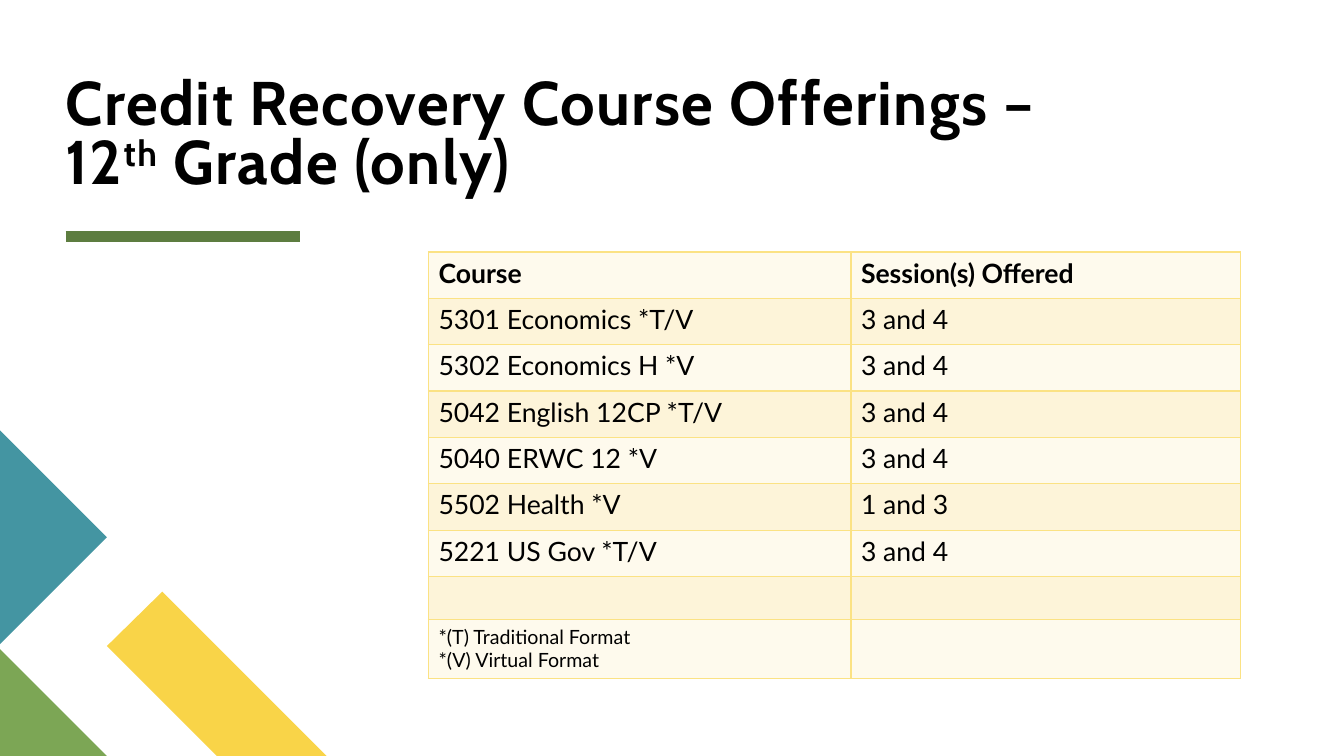
from lxml import etree
from pptx import Presentation, util as u
from pptx.dml.color import RGBColor
from pptx.enum import shapes, text
from pptx.oxml import ns

PX = 9144
BLACK = RGBColor(0x00, 0x00, 0x00)
WHITE = RGBColor(0xFF, 0xFF, 0xFF)
YELLOW = RGBColor(0xF9, 0xD4, 0x48)
GREEN = RGBColor(0x7C, 0xA6, 0x55)
DARK_GREEN = RGBColor(0x5D, 0x7D, 0x40)
TEAL = RGBColor(0x44, 0x95, 0xA2)
BANDS = RGBColor(0xFE, 0xFA, 0xED), RGBColor(0xFD, 0xF4, 0xD9)
BORDER = RGBColor(0xFB, 0xE2, 0x84)

COURSES = [
    ("Course", "Session(s) Offered"),
    ("5301 Economics *T/V", "3 and 4"),
    ("5302 Economics H *V", "3 and 4"),
    ("5042 English 12CP *T/V", "3 and 4"),
    ("5040 ERWC 12 *V", "3 and 4"),
    ("5502 Health *V", "1 and 3"),
    ("5221 US Gov *T/V", "3 and 4"),
    ("", ""),
    ("*(T) Traditional Format\n*(V) Virtual Format", ""),
]
COLUMN_WIDTHS = [419, 386]
ROW_HEIGHTS = [46] * 7 + [43, 58]
DECORATIONS = [
    (YELLOW, [(324, 750), (215, 750), (106, 641), (161, 587)]),
    (GREEN, [(106, 750), (0, 750), (0, 644)]),
    (TEAL, [(0, 427), (106, 533), (0, 639)]),
]


def px(*lengths):
    """Turn pixel lengths into EMU."""
    return [u.Emu(length * PX) for length in lengths]


def style_font(span, name, size, bold):
    """Give a run its font, size, weight and the text colour."""
    span.font.name = name
    span.font.size = u.Pt(size)
    span.font.bold = bold
    span.font.color.rgb = BLACK


def add_decoration(page, color, points):
    """Draw a filled polygon through the given points."""
    builder = page.shapes.build_freeform(*points[0], scale=PX)
    builder.add_line_segments(points[1:], close=True)
    shape = builder.convert_to_shape()
    shape.shadow.inherit = False
    shape.fill.solid()
    shape.fill.fore_color.rgb = color
    shape.line.fill.background()


def add_rule(page, left, right, top):
    """Draw the thick line below the title."""
    rule = page.shapes.add_connector(
        shapes.MSO_CONNECTOR.STRAIGHT, *px(left, top, right, top))
    rule.line.color.rgb = DARK_GREEN
    rule.line.width = u.Pt(8)
    etree.SubElement(rule._element.spPr, ns.qn("a:effectLst"))


def add_title(page):
    """Write the two-line title with its raised ordinal ending."""
    box = page.shapes.add_textbox(*px(65, 11, 1189, 184))
    frame = box.text_frame
    frame.word_wrap = True
    frame.vertical_anchor = text.MSO_ANCHOR.BOTTOM
    frame.margin_left = frame.margin_right = 0
    frame.margin_top = frame.margin_bottom = 0
    para = frame.paragraphs[0]
    para.text = "Credit Recovery Course Offerings –\v12"
    para.line_spacing = 0.8
    ordinal = para.add_run()
    ordinal.text = "th"
    para.add_run().text = " Grade (only)"
    for span in para.runs:
        style_font(span, "Cabin", 44, True)
        span.font._element.set("spc", "100")
    ordinal.font._element.set("baseline", "30000")


def add_borders(cell):
    """Put a thin line on all four sides of a cell."""
    properties = cell._tc.get_or_add_tcPr()
    for side in "LRTB":
        line = etree.SubElement(properties, ns.qn(f"a:ln{side}"), w=str(u.Pt(1)))
        fill = etree.SubElement(line, ns.qn("a:solidFill"))
        etree.SubElement(fill, ns.qn("a:srgbClr"), val=str(BORDER))


def fill_cell(cell, words, color, size, bold):
    """Write, border and colour one cell."""
    cell.text_frame.text = words
    for para in cell.text_frame.paragraphs:
        for span in para.runs:
            style_font(span, "Lato", size, bold)
    add_borders(cell)
    cell.fill.solid()
    cell.fill.fore_color.rgb = color


def add_course_table(page):
    """Build the table of courses and sessions."""
    area = px(425, 250, sum(COLUMN_WIDTHS), sum(ROW_HEIGHTS))
    table = page.shapes.add_table(len(COURSES), len(COLUMN_WIDTHS), *area).table
    for column, width in zip(table.columns, px(*COLUMN_WIDTHS)):
        column.width = width
    for row, height in zip(table.rows, px(*ROW_HEIGHTS)):
        row.height = height
    last = len(COURSES) - 1
    for index, (row, course) in enumerate(zip(table.rows, COURSES)):
        size = 14 if index == last else 19
        for cell, words in zip(row.cells, course):
            fill_cell(cell, words, BANDS[index % 2], size, index == 0)


def main():
    """Build and save the slide."""
    deck = Presentation()
    deck.slide_width, deck.slide_height = px(1333, 750)
    page = deck.slides.add_slide(deck.slide_layouts[6])
    page.background.fill.solid()
    page.background.fill.fore_color.rgb = WHITE
    add_rule(page, 65, 298, 235)
    for color, points in DECORATIONS:
        add_decoration(page, color, points)
    add_title(page)
    add_course_table(page)
    deck.save("out.pptx")


if __name__ == "__main__":
    main()
